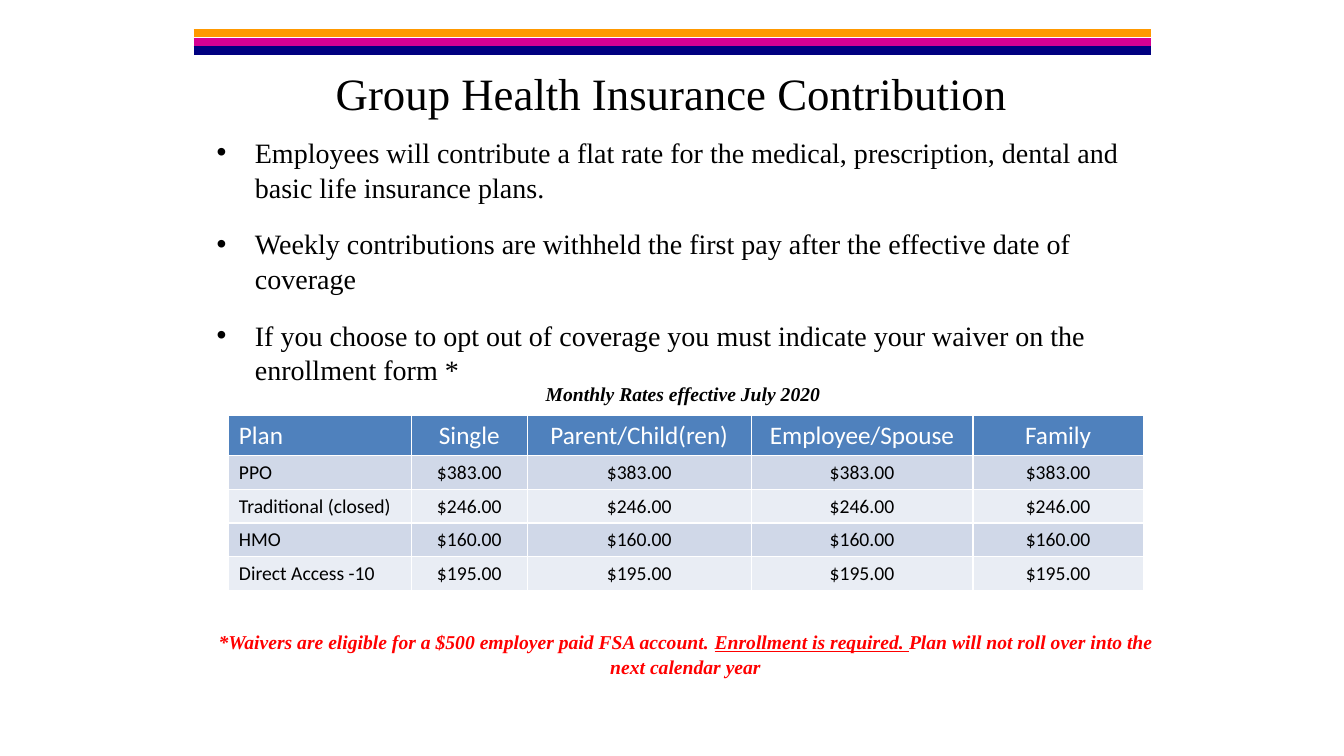
from dataclasses import dataclass

from lxml import etree
from pptx import Presentation
from pptx import util as u
from pptx.dml.color import RGBColor
from pptx.enum import shapes, text
from pptx.oxml import ns

SERIF = "Times New Roman"
SANS = "Calibri"
BLACK = "000000"
RED = "FF0000"
WHITE = "FFFFFF"
HEADER_FILL = "4F81BD"
BAND_FILLS = ("D0D8E8", "E9EDF4")
CENTER = text.PP_ALIGN.CENTER
LEFT = text.PP_ALIGN.LEFT


@dataclass
class Stripe:
    top: float
    color: str


@dataclass
class Box:
    left: float
    top: float
    width: float
    height: float


@dataclass
class Plan:
    name: str
    rate: str


STRIPES = [Stripe(0.33, "FF9900"), Stripe(0.42, "D60093"), Stripe(0.5, "000080")]
POINTS = [
    "Employees will contribute a flat rate for the medical, prescription, dental and basic life insurance plans.",
    "Weekly contributions are withheld the first pay after the effective date of coverage",
    "If you choose to opt out of coverage you must indicate your waiver on the enrollment form *",
]
TIERS = ["Single", "Parent/Child(ren)", "Employee/Spouse", "Family"]
PLANS = [
    Plan("PPO", "$383.00"),
    Plan("Traditional (closed)", "$246.00"),
    Plan("HMO", "$160.00"),
    Plan("Direct Access -10", "$195.00"),
]
COLUMN_WIDTHS = [1.81, 1.15, 2.22, 2.2, 1.69]


def rgb(color: str) -> RGBColor:
    return RGBColor.from_string(color)


def add_text(paragraph, content: str, *, size: float, font: str = SERIF, color: str = BLACK,
             bold: bool = False, italic: bool = False, underline: bool = False,
             align=LEFT) -> None:
    paragraph.alignment = align
    run = paragraph.add_run()
    run.text = content
    run.font.name = font
    run.font.size = u.Pt(size)
    run.font.bold = bold
    run.font.italic = italic
    run.font.underline = underline
    run.font.color.rgb = rgb(color)


def add_frame(slide, box: Box):
    frame = slide.shapes.add_textbox(
        u.Inches(box.left), u.Inches(box.top), u.Inches(box.width), u.Inches(box.height)
    ).text_frame
    frame.word_wrap = True
    return frame


def add_stripe(slide, stripe: Stripe) -> None:
    line = slide.shapes.add_connector(
        shapes.MSO_CONNECTOR.STRAIGHT,
        u.Inches(1.92), u.Inches(stripe.top), u.Inches(11.42), u.Inches(stripe.top),
    )
    line.line.color.rgb = rgb(stripe.color)
    line.line.width = u.Pt(6)
    etree.SubElement(line._element.spPr, ns.qn("a:effectLst"))


def add_points(slide) -> None:
    frame = add_frame(slide, Box(2.05, 1.28, 9.5, 2.5))
    for index, point in enumerate(POINTS):
        paragraph = frame.paragraphs[0] if index == 0 else frame.add_paragraph()
        properties = paragraph._p.get_or_add_pPr()
        properties.set("marL", str(u.Inches(0.38)))
        properties.set("indent", str(u.Inches(-0.38)))
        etree.SubElement(properties, ns.qn("a:buFont"), typeface="Arial")
        etree.SubElement(properties, ns.qn("a:buChar"), char="•")
        paragraph.line_spacing = 1.04
        if index:
            paragraph.space_before = u.Pt(15.4)
        add_text(paragraph, point, size=20)


def add_rates(slide) -> None:
    table = slide.shapes.add_table(
        len(PLANS) + 1, len(COLUMN_WIDTHS),
        u.Inches(2.27), u.Inches(4.12), u.Inches(sum(COLUMN_WIDTHS)), u.Inches(1.73),
    ).table
    for column, width in zip(table.columns, COLUMN_WIDTHS):
        column.width = u.Inches(width)
    rows = [["Plan", *TIERS]] + [[plan.name] + [plan.rate] * len(TIERS) for plan in PLANS]
    for row, values in enumerate(rows):
        header = row == 0
        table.rows[row].height = u.Inches(0.4 if header else 0.33)
        for column, value in enumerate(values):
            cell = table.cell(row, column)
            cell.fill.solid()
            cell.fill.fore_color.rgb = rgb(HEADER_FILL if header else BAND_FILLS[(row - 1) % 2])
            add_text(cell.text_frame.paragraphs[0], value, size=18 if header else 14, font=SANS,
                     color=WHITE if header else BLACK, align=CENTER if column else LEFT)


def main() -> None:
    deck = Presentation()
    deck.slide_width = u.Inches(13.33)
    deck.slide_height = u.Inches(7.5)
    slide = deck.slides.add_slide(deck.slide_layouts[6])

    for stripe in STRIPES:
        add_stripe(slide, stripe)

    title = add_frame(slide, Box(2.08, 0.55, 9.16, 0.74))
    title.vertical_anchor = text.MSO_ANCHOR.MIDDLE
    add_text(title.paragraphs[0], "Group Health Insurance Contribution", size=32, align=CENTER)

    add_points(slide)

    caption = add_frame(slide, Box(2.05, 3.74, 9.5, 0.34))
    add_text(caption.paragraphs[0], "Monthly Rates effective July 2020 ", size=14,
             bold=True, italic=True, align=CENTER)

    add_rates(slide)

    waiver = add_frame(slide, Box(2.05, 6.18, 9.5, 0.6)).paragraphs[0]
    waiver.line_spacing = 1.08
    for content, underline in (
        ("*Waivers are eligible for a $500 employer paid FSA account. ", False),
        ("Enrollment is required. ", True),
        ("Plan will not roll over into the next calendar year", False),
    ):
        add_text(waiver, content, size=14, color=RED, bold=True, italic=True,
                 underline=underline, align=CENTER)

    deck.save("out.pptx")


if __name__ == "__main__":
    main()
